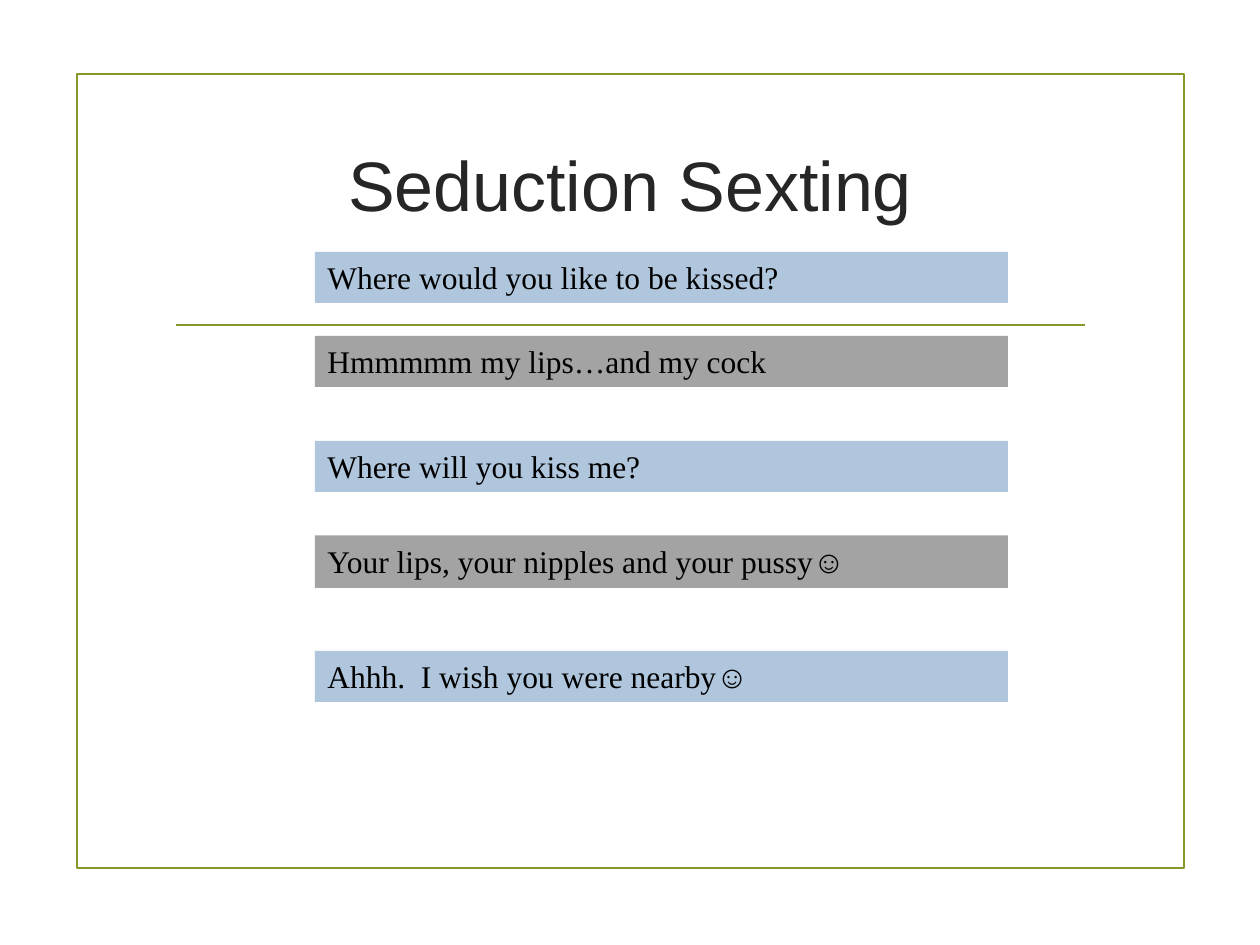
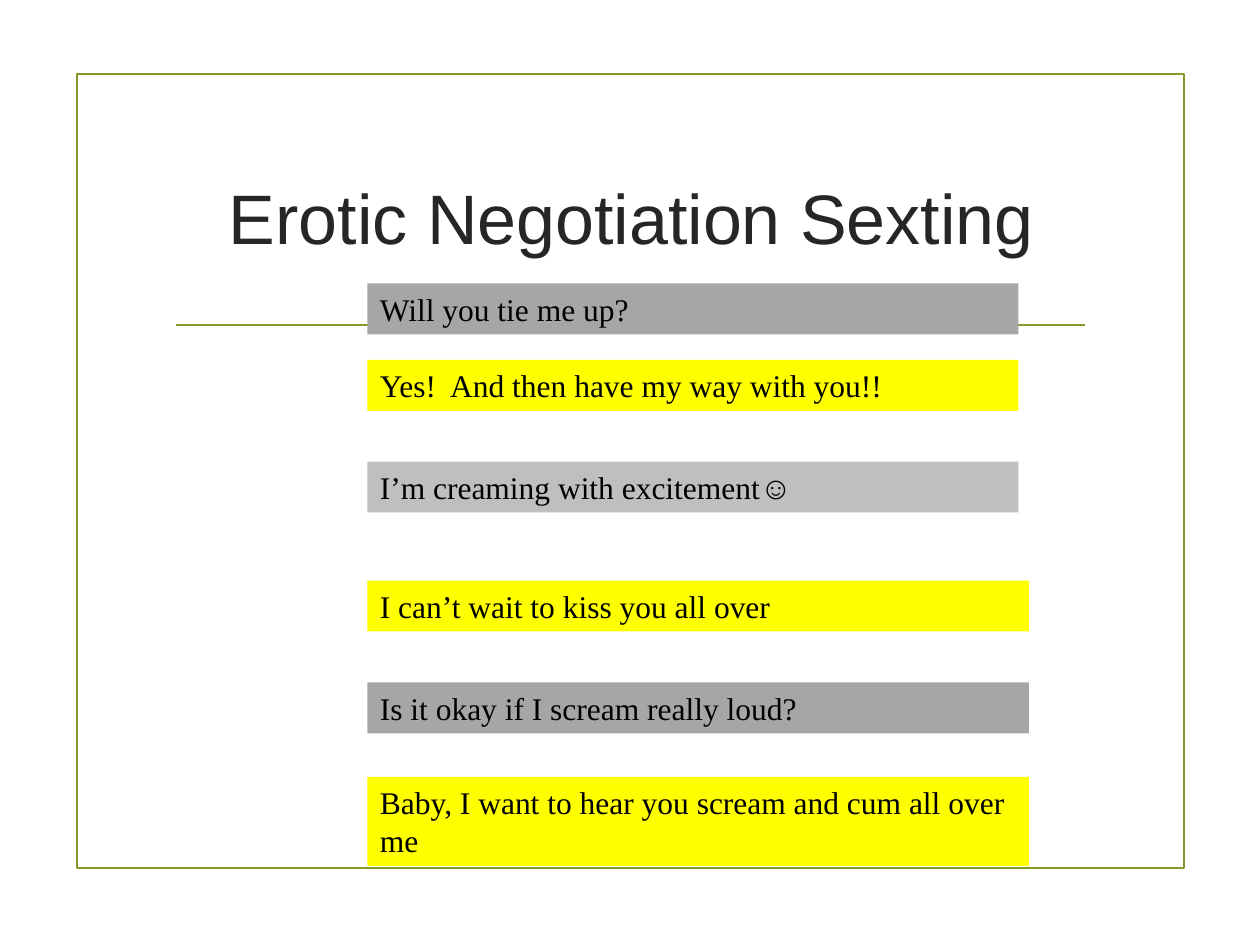
from dataclasses import dataclass

import lxml.etree
import pptx
import pptx.dml.color
import pptx.enum.shapes
import pptx.enum.text
import pptx.oxml.ns
import pptx.presentation
import pptx.shapes.base
import pptx.slide
import pptx.text.text
import pptx.util

Pt = pptx.util.Pt


@dataclass(frozen=True)
class Theme:
    olive: str = "83992A"
    title_color: str = "262626"
    message_color: str = "000000"
    blue: str = "AFC6DD"
    warm_gray: str = "A3A3A3"
    gray: str = "A6A6A6"
    light_gray: str = "BFBFBF"
    yellow: str = "FFFF00"
    title_font: str = "Arial"
    message_font: str = "Times New Roman"
    title_size: float = 40
    message_size: float = 18
    line_width: float = 1.25


THEME = Theme()
MESSAGE_HEIGHT = 29.08


@dataclass(frozen=True)
class Message:
    text: str
    top: float
    width: float
    fill: str
    height: float = MESSAGE_HEIGHT


@dataclass(frozen=True)
class Conversation:
    title: str
    title_left: float
    title_top: float
    message_left: float
    messages: tuple[Message, ...]


CONVERSATIONS = (
    Conversation("Seduction Sexting", 92.16, 53.28, 180, (
        Message("Where would you like to be kissed?", 144, 396, THEME.blue),
        Message("Hmmmmm my lips…and my cock", 192, 396, THEME.warm_gray),
        Message("Where will you kiss me?", 252, 396, THEME.blue),
        Message("Your lips, your nipples and your pussy☺", 306, 396, THEME.warm_gray, 30),
        Message("Ahhh.  I wish you were nearby☺", 372, 396, THEME.blue),
    )),
    Conversation("Erotic Negotiation Sexting", 92.88, 72, 210, (
        Message("Will you tie me up?", 162, 372, THEME.gray),
        Message("Yes!  And then have my way with you!!", 205.7, 372, THEME.yellow),
        Message("I’m creaming with excitement☺", 263.8, 372, THEME.light_gray),
        Message("I can’t wait to kiss you all over", 331.8, 378, THEME.yellow),
        Message("Is it okay if I scream really loud?", 390, 378, THEME.gray),
        Message("Baby, I want to hear you scream and cum all over me", 444, 378,
                THEME.yellow, 50.9),
    )),
)


def rgb(color: str) -> pptx.dml.color.RGBColor:
    return pptx.dml.color.RGBColor.from_string(color)


def add_rectangle(slide: pptx.slide.Slide, left: float, top: float,
                  width: float, height: float) -> pptx.shapes.base.BaseShape:
    shape = slide.shapes.add_shape(pptx.enum.shapes.MSO_SHAPE.RECTANGLE,
                                   Pt(left), Pt(top), Pt(width), Pt(height))
    shape.shadow.inherit = False
    return shape


def add_run(paragraph: pptx.text.text._Paragraph, text: str, font: str,
            size: float, color: str) -> None:
    run = paragraph.add_run()
    run.text = text
    run.font.name = font
    run.font.size = Pt(size)
    run.font.color.rgb = rgb(color)


def add_frame(slide: pptx.slide.Slide) -> None:
    border = add_rectangle(slide, 43.92, 42.48, 632.88, 453.6)
    border.fill.background()
    rule = slide.shapes.add_connector(pptx.enum.shapes.MSO_CONNECTOR.STRAIGHT,
                                      Pt(100.8), Pt(185.76), Pt(619.92), Pt(185.76))
    properties = rule._element.spPr
    for outlined in (border, rule):
        outlined.line.color.rgb = rgb(THEME.olive)
        outlined.line.width = Pt(THEME.line_width)
    lxml.etree.SubElement(properties, pptx.oxml.ns.qn("a:effectLst"))


def add_title(slide: pptx.slide.Slide, conversation: Conversation) -> None:
    title = slide.shapes.add_textbox(Pt(conversation.title_left), Pt(conversation.title_top),
                                     Pt(535.68), Pt(102.96))
    text_frame = title.text_frame
    text_frame.word_wrap = True
    text_frame.vertical_anchor = pptx.enum.text.MSO_ANCHOR.MIDDLE
    paragraph = text_frame.paragraphs[0]
    paragraph.alignment = pptx.enum.text.PP_ALIGN.CENTER
    add_run(paragraph, conversation.title, THEME.title_font, THEME.title_size, THEME.title_color)


def add_message(slide: pptx.slide.Slide, message: Message, left: float) -> None:
    bar = add_rectangle(slide, left, message.top, message.width, message.height)
    bar.fill.solid()
    bar.fill.fore_color.rgb = rgb(message.fill)
    bar.line.fill.background()
    text_frame = bar.text_frame
    text_frame.word_wrap = True
    text_frame.auto_size = pptx.enum.text.MSO_AUTO_SIZE.SHAPE_TO_FIT_TEXT
    text_frame.vertical_anchor = pptx.enum.text.MSO_ANCHOR.TOP
    paragraph = text_frame.paragraphs[0]
    paragraph.alignment = pptx.enum.text.PP_ALIGN.LEFT
    add_run(paragraph, message.text, THEME.message_font, THEME.message_size, THEME.message_color)


def add_conversation(presentation: pptx.presentation.Presentation,
                     conversation: Conversation) -> None:
    slide = presentation.slides.add_slide(presentation.slide_layouts[6])
    add_frame(slide)
    add_title(slide, conversation)
    for message in conversation.messages:
        add_message(slide, message, conversation.message_left)


def main() -> None:
    presentation = pptx.Presentation()
    presentation.slide_width = Pt(720)
    presentation.slide_height = Pt(540)
    for conversation in CONVERSATIONS:
        add_conversation(presentation, conversation)
    presentation.save("out.pptx")


if __name__ == "__main__":
    main()
